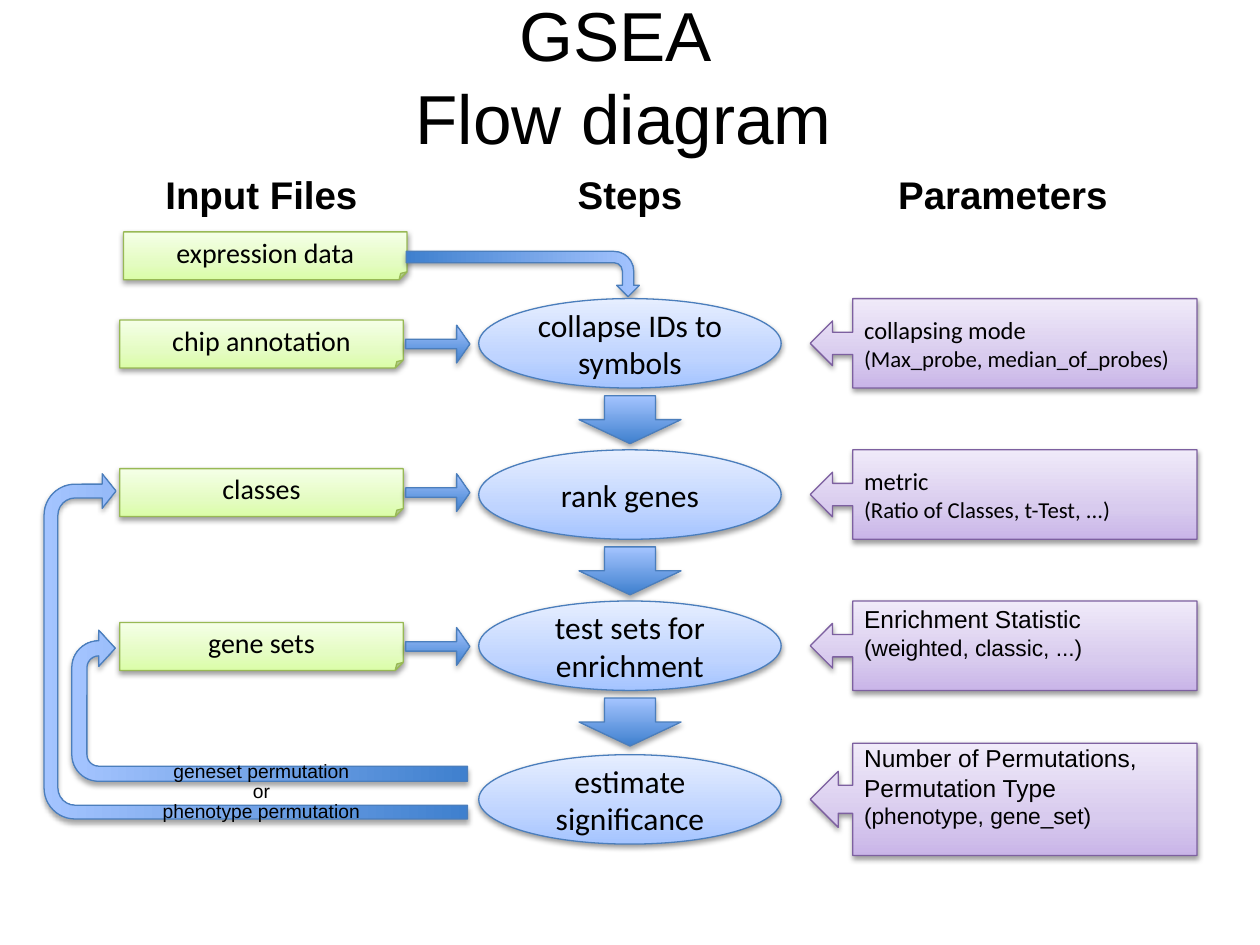
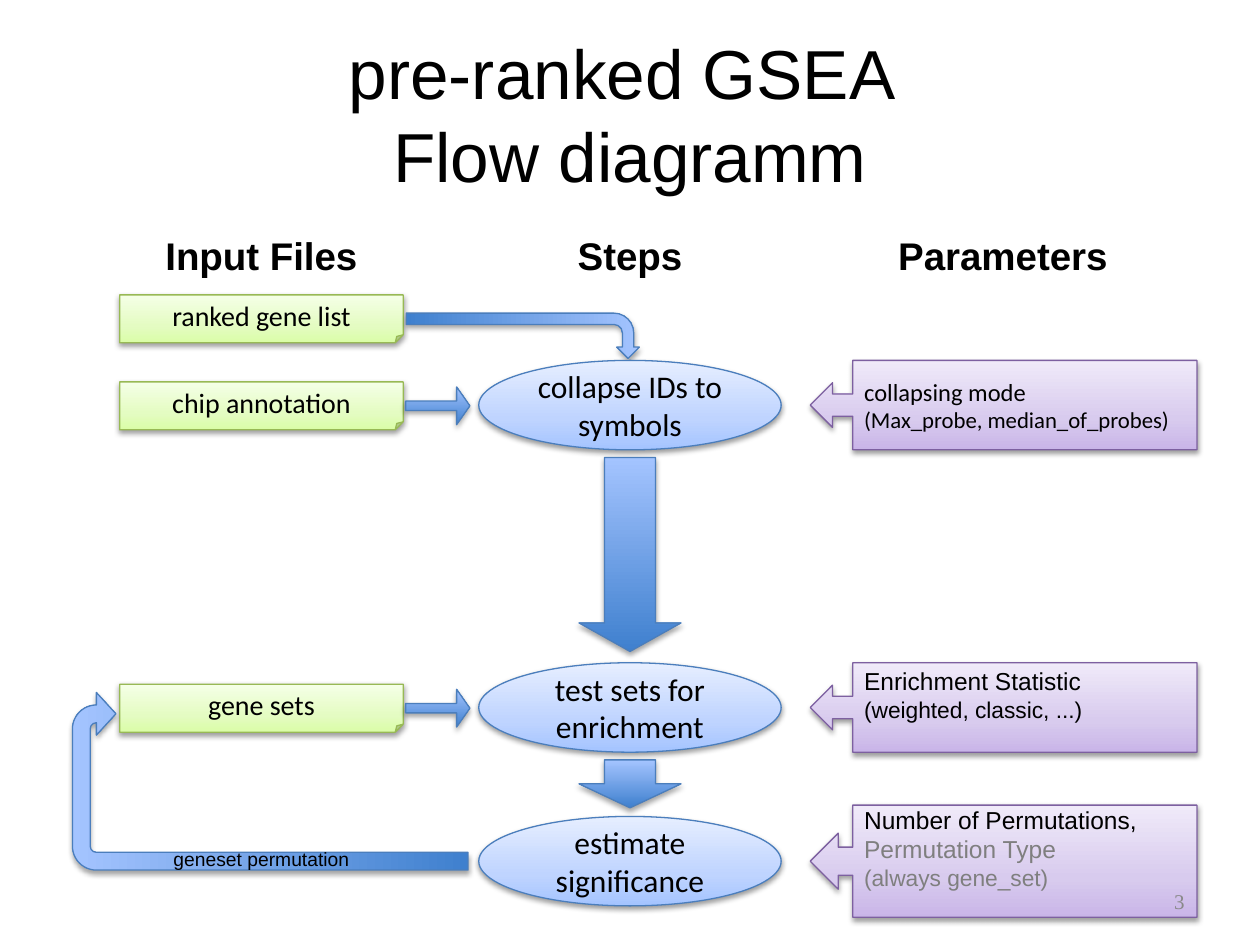
from dataclasses import dataclass, field, replace
from typing import Any, NamedTuple

from lxml import etree
from pptx import Presentation
from pptx import util as u
from pptx.dml import color
from pptx.enum import shapes, text
from pptx.oxml import ns

KIND = shapes.MSO_SHAPE
SIDE = text.PP_ALIGN
MID = text.MSO_ANCHOR.MIDDLE


class Look(NamedTuple):
    stops: tuple[tuple[int, str], ...]
    edge: str
    alpha: int = 38
    dist: float = 1.6


@dataclass(frozen=True)
class Theme:
    sans: str = "Arial"
    body: str = "Calibri"
    serif: str = "Times New Roman"
    ink: str = "000000"
    dim: str = "7F7F7F"
    pale: str = "898989"
    title: float = 39.6
    head: float = 22
    step: float = 18
    file: float = 16
    note: float = 14
    small: float = 13
    page: float = 12
    label: float = 11
    blur: float = 3.1
    green: Look = Look(((0, "DAFDA7"), (35, "E4FCC2"), (100, "F5FFE7")), "98B955")
    blue: Look = Look(((0, "A4C4FF"), (35, "BFD4FF"), (100, "E6EEFF")), "4B7EBC")
    plum: Look = Look(((0, "C9B5E8"), (35, "D8CBEE"), (100, "F0EAF9")), "7D60A0")
    arrow: Look = Look(((0, "3F80CE"), (100, "A4C4FF")), "4B7EBC", 35, 1.8)


T = Theme()
MARGINS = {"margin_left": u.Pt(6.5), "margin_right": u.Pt(6.5),
           "margin_top": u.Pt(3.2), "margin_bottom": u.Pt(3.2)}
FILE_X, FILE_MID, STEP_MID, NOTE_MID = 68.4, 149.4, 360, 573.1
DROP_W, DROP_H = 58.3, 27.4
BLANK = 15


class Box(NamedTuple):
    x: float
    y: float
    w: float
    h: float


class Line(NamedTuple):
    words: str
    size: float
    tint: str = T.ink
    font: str = T.sans
    bold: bool = False


class File(NamedTuple):
    y: float
    name: str
    x: float = FILE_X


class Label(NamedTuple):
    y: float
    words: str


class Loop(NamedTuple):
    box: Box
    bends: tuple[float, ...]


@dataclass(frozen=True)
class Row:
    y: float
    step: str
    notes: tuple[Line, ...]
    high: float = 51.1
    pad: float = 0
    drop: float = DROP_H


@dataclass(frozen=True)
class Chart:
    title: str
    place: Box
    shift: float
    files: tuple[File, ...]
    rows: tuple[Row, ...]
    loops: tuple[Loop, ...]
    labels: tuple[Label, ...]
    page: str = field(default="")


def fit(item: Any, vals: dict[str, Any]) -> None:
    for key, val in vals.items():
        setattr(item, key, val)


def rgb(code: str) -> color.RGBColor:
    return color.RGBColor.from_string(code)


def place(box: Box) -> list[u.Length]:
    return [u.Pt(side) for side in box]


def write(frame: Any, lines: tuple[Line, ...], side: Any, **vals: Any) -> None:
    fit(frame, {"word_wrap": True, "vertical_anchor": MID, **vals})
    for num, line in enumerate(lines):
        para = frame.add_paragraph() if num else frame.paragraphs[0]
        para.alignment = side
        para.text = line.words
        for run in para.runs:
            fit(run.font, {"name": line.font, "size": u.Pt(line.size), "bold": line.bold})
            run.font.color.rgb = rgb(line.tint)


def add_tint(root: Any, code: str) -> Any:
    return etree.SubElement(root, ns.qn("a:srgbClr"), val=code)


def paint(shape: Any, look: Look) -> None:
    shape.fill.gradient()
    shape.fill.gradient_angle = 90
    props = shape.element.spPr
    stops = props.find(".//" + ns.qn("a:gsLst"))
    for old in list(stops):
        stops.remove(old)
    for pos, code in look.stops:
        add_tint(etree.SubElement(stops, ns.qn("a:gs"), pos=str(pos * 1000)), code)
    shape.line.color.rgb = rgb(look.edge)
    shape.line.width = u.Pt(0.75)
    shape.shadow.inherit = False
    shade = etree.SubElement(
        props.find(ns.qn("a:effectLst")), ns.qn("a:outerShdw"),
        blurRad=str(u.Pt(T.blur)), dist=str(u.Pt(look.dist)),
        dir="5400000", rotWithShape="0")
    etree.SubElement(add_tint(shade, T.ink), ns.qn("a:alpha"), val=str(look.alpha * 1000))


def draw(slide: Any, kind: Any, box: Box, look: Look,
         bends: tuple[float, ...] = (), turn: float = 0) -> Any:
    shape = slide.shapes.add_shape(kind, *place(box))
    shape.rotation = turn
    for num, bend in enumerate(bends):
        shape.adjustments[num] = bend
    paint(shape, look)
    return shape


def add_text(slide: Any, box: Box, line: Line, side: Any, **vals: Any) -> None:
    frame = slide.shapes.add_textbox(*place(box)).text_frame
    write(frame, (line,), side, **vals)


def add_tag(slide: Any, mid: float, y: float, wide: float, high: float, line: Line) -> None:
    add_text(slide, Box(mid - wide / 2, y, wide, high), line, SIDE.CENTER,
             **MARGINS, word_wrap=False, vertical_anchor=text.MSO_ANCHOR.TOP)


def add_file(slide: Any, item: File, shift: float, first: bool) -> None:
    mid = item.y + shift
    note = draw(slide, KIND.FOLDED_CORNER, Box(item.x, mid - 13.7, 162, 27.4), T.green)
    write(note.text_frame, (Line(item.name, T.file, font=T.body),), SIDE.CENTER, **MARGINS)
    if first:
        draw(slide, KIND.BENT_ARROW, Box(285.8, 90 + shift, 25.9, 133.2), T.arrow, turn=90)
    else:
        draw(slide, KIND.RIGHT_ARROW, Box(231.8, mid - 10.8, 36.7, 21.6), T.arrow,
             (0.25, 0.35))


def add_row(slide: Any, row: Row, shift: float, last: bool) -> None:
    mid = row.y + shift
    step = draw(slide, KIND.OVAL, Box(STEP_MID - 86.4, mid - 25.55, 172.8, 51.1), T.blue)
    write(step.text_frame, (Line(row.step, T.step, font=T.body),), SIDE.CENTER, **MARGINS)
    call = draw(slide, KIND.LEFT_ARROW_CALLOUT,
                Box(463, mid - row.high / 2, 221, row.high), T.plum,
                (0.25, 0.25, 0.25, 0.89))
    low = MARGINS["margin_bottom"] + u.Pt(row.pad)
    write(call.text_frame, row.notes, SIDE.LEFT, **{**MARGINS, "margin_bottom": low})
    if not last:
        bend = 0.5 if row.drop < DROP_W else 0.28
        draw(slide, KIND.DOWN_ARROW,
             Box(STEP_MID - DROP_W / 2, mid + 29.9, DROP_W, row.drop), T.arrow, (0.5, bend))


def build(deck: Any, chart: Chart) -> None:
    slide = deck.slides.add_slide(deck.slide_layouts[5])
    title = slide.shapes.title
    fit(title, dict(zip(("left", "top", "width", "height"), place(chart.place))))
    write(title.text_frame, (Line(chart.title, T.title),), SIDE.CENTER,
          auto_size=text.MSO_AUTO_SIZE.NONE)
    for num, item in enumerate(chart.files):
        add_file(slide, item, chart.shift, num == 0)
    for row in chart.rows:
        add_row(slide, row, chart.shift, row is chart.rows[-1])
    for loop in chart.loops:
        box = loop.box._replace(y=loop.box.y + chart.shift)
        draw(slide, KIND.U_TURN_ARROW, box, T.arrow, loop.bends, 270)
    for mid, wide, words in HEADS:
        add_tag(slide, mid, 94.3 + chart.shift, wide, 33.1, Line(words, T.head, bold=True))
    for label in chart.labels:
        add_tag(slide, FILE_MID, label.y + chart.shift, 126.7, 20.2,
                Line(label.words, T.label))
    if chart.page:
        add_text(slide, Box(516.2, 500.4, 167.8, 28.8),
                 Line(chart.page, T.page, T.pale, T.serif), SIDE.RIGHT)


HEADS = ((FILE_MID, 123.8, "Input Files"), (STEP_MID, 73.4, "Steps"),
         (NOTE_MID, 133.9, "Parameters"))
MERGE = Row(196.2, "collapse IDs to symbols", (
    Line("collapsing mode", T.note, font=T.body),
    Line("(Max_probe, median_of_probes)", T.small, font=T.body)))
RANK = Row(282.6, "rank genes", (
    Line("metric", T.note, font=T.body),
    Line("(Ratio of Classes, t-Test, ...)", T.small, font=T.body)))
TEST = Row(369, "test sets for enrichment", (
    Line("Enrichment Statistic", T.note),
    Line("(weighted, classic, ...)", T.small)), pad=BLANK)
JUDGE = Row(456.8, "estimate significance", (
    Line("Number of Permutations,", T.note),
    Line("Permutation Type", T.note),
    Line("(phenotype, gene_set)", T.small)), high=64.1, pad=BLANK)
FIXED = replace(JUDGE, notes=(
    JUDGE.notes[0],
    JUDGE.notes[1]._replace(tint=T.dim),
    Line("(always gene_set)", T.small, T.dim)))
CHIP = File(196.6, "chip annotation")
SETS = File(369.4, "gene sets")
INNER = (0.1, 0.12, 0.11, 0.19, 0.11)
OUTER = (0.04, 0.05, 0.04, 0.09, 0.17)

CHARTS = (
    Chart("GSEA \vFlow diagram", Box(-7.9, 0, 728.6, 86.4), 0,
          (File(146.2, "expression data", 70.6), CHIP, File(281.5, "classes"), SETS),
          (MERGE, RANK, TEST, JUDGE),
          (Loop(Box(110.9, 290.2, 86.4, 226.1), INNER),
           Loop(Box(47.5, 248.4, 197.3, 241.9), OUTER)),
          (Label(430.6, "geneset permutation"), Label(453.6, "phenotype permutation"),
           Label(442.1, "or"))),
    Chart("pre-ranked GSEA \vFlow diagramm", Box(36, 21.6, 648, 86.4), 35.3,
          (File(146.9, "ranked gene list"), CHIP, SETS),
          (replace(MERGE, drop=110.9), TEST, FIXED),
          (Loop(Box(103.7, 298.1, 101.5, 226.1), INNER),),
          (Label(445.7, "geneset permutation"),), "3"),
)


def main() -> None:
    deck = Presentation()
    fit(deck, {"slide_width": u.Pt(720), "slide_height": u.Pt(540)})
    for chart in CHARTS:
        build(deck, chart)
    deck.save("out.pptx")


if __name__ == "__main__":
    main()
